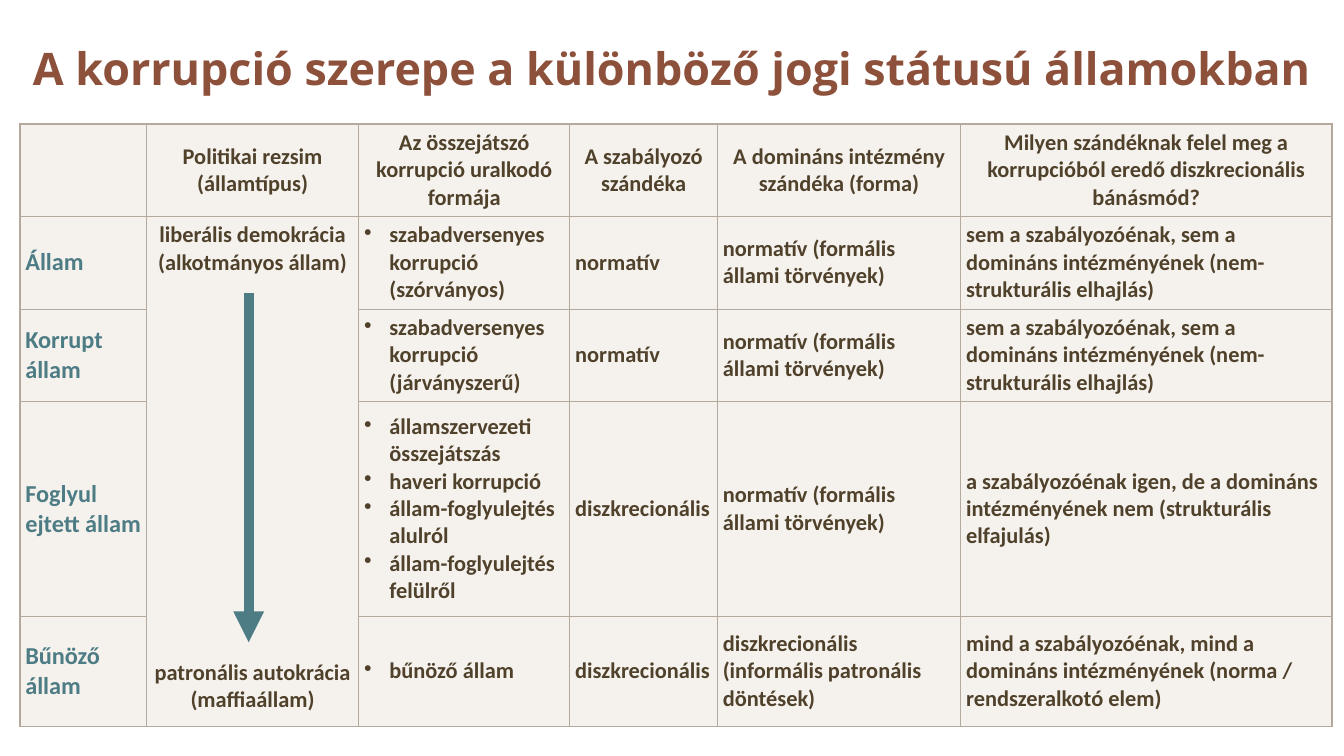
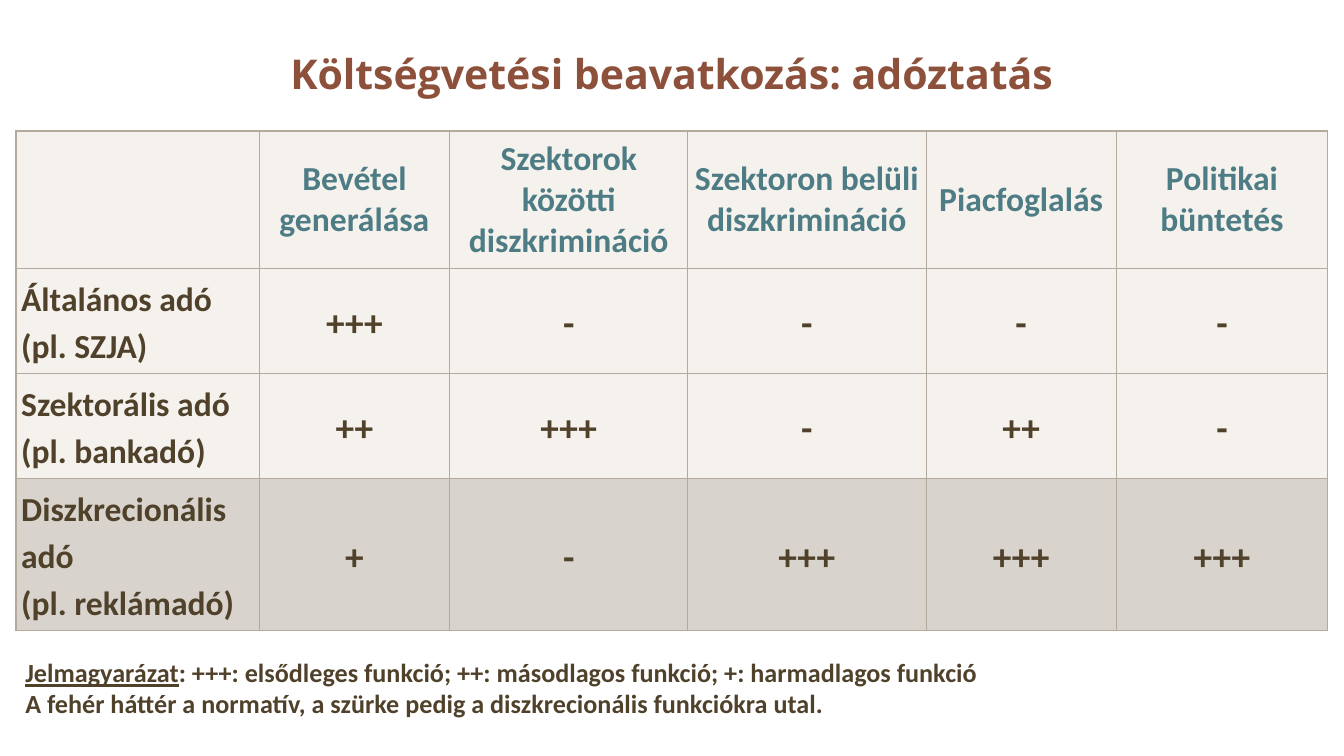
from lxml.etree import SubElement
from pptx import Presentation
from pptx.dml.color import RGBColor
from pptx.enum.shapes import MSO_CONNECTOR
from pptx.enum.text import MSO_ANCHOR, PP_ALIGN
from pptx.oxml import parse_xml
from pptx.oxml.ns import nsdecls, qn
from pptx.util import Cm, Pt

RUST = RGBColor(0x8D, 0x50, 0x3B)
TEAL = RGBColor(0x4D, 0x7C, 0x85)
BROWN = RGBColor(0x50, 0x41, 0x2B)
CREAM = RGBColor(0xEF, 0xEA, 0xE4)
GREY = RGBColor(0xB3, 0xAA, 0x9D)
GRID = RGBColor(0xB3, 0xA9, 0x9D)

TITLE_FONT = "Open Sans"
BODY_FONT = "Calibri"
CELL_MARGIN = Cm(0.1)
CONTENT_WIDTH = 24.79
OUTER_PT, INNER_PT = 1, 0.5

REGIME_HEADERS = [
    "",
    "Politikai rezsim (államtípus)",
    "Az összejátszó korrupció uralkodó formája",
    "A szabályozó szándéka",
    "A domináns intézmény szándéka (forma)",
    "Milyen szándéknak felel meg a korrupcióból eredő diszkrecionális bánásmód?",
]
REGIME_ENDS = [
    "liberális demokrácia\v(alkotmányos állam)",
    "patronális autokrácia",
    "(maffiaállam)",
]
FORMAL = "normatív (formális állami törvények)"
DEVIATION = ("sem a szabályozóénak, sem a domináns intézményének "
             "(nem-strukturális elhajlás)")
# State, forms of corruption, regulator, dominant institution, matching intention
STATES = [
    ("Állam", ["szabadversenyes korrupció (szórványos)"],
     "normatív", FORMAL, DEVIATION),
    ("Korrupt állam", ["szabadversenyes korrupció (járványszerű)"],
     "normatív", FORMAL, DEVIATION),
    ("Foglyul ejtett állam",
     ["államszervezeti összejátszás", "haveri korrupció",
      "állam-foglyulejtés alulról", "állam-foglyulejtés felülről"],
     "diszkrecionális", FORMAL,
     "a szabályozóénak igen, de a domináns intézményének nem "
     "(strukturális elfajulás)"),
    ("Bűnöző állam", ["bűnöző állam"], "diszkrecionális",
     "diszkrecionális (informális patronális döntések)",
     "mind a szabályozóénak, mind a domináns intézményének "
     "(norma / rendszeralkotó elem)"),
]

TAX_HEADERS = [
    "", "Bevétel generálása", "Szektorok közötti diszkrimináció",
    "Szektoron belüli diszkrimináció", "Piacfoglalás", "Politikai büntetés",
]
# Tax, scores by function, background
TAXES = [
    (["Általános adó (pl. SZJA)"], ["+++", "-", "-", "-", "-"], CREAM),
    (["Szektorális adó (pl. bankadó)"], ["++", "+++", "-", "++", "-"], CREAM),
    (["Diszkrecionális adó", "(pl. reklámadó)"],
     ["+", "-", "+++", "+++", "+++"], GREY),
]


def style_runs(paragraph, size, color, font=BODY_FONT):
    for run in paragraph.runs:
        run.font.name = font
        run.font.size = Pt(size)
        run.font.bold = True
        run.font.color.rgb = color


def add_titled_slide(prs, text, size, height):
    slide = prs.slides.add_slide(prs.slide_layouts[5])
    title = slide.shapes.title
    title.left, title.top = Cm(0.3), Cm(0)
    title.width, title.height = Cm(CONTENT_WIDTH), Cm(height)
    frame = title.text_frame
    frame.text = text
    frame.vertical_anchor = MSO_ANCHOR.MIDDLE
    frame.paragraphs[0].alignment = PP_ALIGN.CENTER
    style_runs(frame.paragraphs[0], size, RUST, TITLE_FONT)
    return slide


def add_grid(slide, left, top, columns, rows):
    frame = slide.shapes.add_table(len(rows), len(columns), Cm(left), Cm(top),
                                   Cm(sum(columns)), Cm(sum(rows)))
    table = frame.table
    table.first_row = table.horz_banding = False
    for column, width in zip(table.columns, columns):
        column.width = Cm(width)
    for row, height in zip(table.rows, rows):
        row.height = Cm(height)
    for r in range(len(rows)):
        for c in range(len(columns)):
            cell = table.cell(r, c)
            cell.margin_left = cell.margin_right = CELL_MARGIN
            cell.margin_top = cell.margin_bottom = CELL_MARGIN
            cell.vertical_anchor = MSO_ANCHOR.MIDDLE
            fill_cell(cell, CREAM, 60)
            border_cell(cell, {"lnL": c == 0, "lnR": c == len(columns) - 1,
                               "lnT": r == 0, "lnB": r == len(rows) - 1})
    return table


def fill_cell(cell, color, opacity):
    """Fill the cell with a colour at the given opacity in percent."""
    cell.fill.solid()
    cell.fill.fore_color.rgb = color
    rgb = cell.fill._xPr.find(qn("a:solidFill")).find(qn("a:srgbClr"))
    SubElement(rgb, qn("a:alpha"), val=str(opacity * 1000))


def border_cell(cell, edges):
    """Draw each edge, thicker where it lies on the outside of the table."""
    properties = cell._tc.get_or_add_tcPr()
    for position, (tag, is_outer) in enumerate(edges.items()):
        width = Pt(OUTER_PT if is_outer else INNER_PT)
        properties.insert(position, parse_xml(
            f'<a:{tag} {nsdecls("a")} w="{width}"><a:solidFill>'
            f'<a:srgbClr val="{GRID}"/></a:solidFill></a:{tag}>'))


def add_bullet(paragraph):
    properties = paragraph._p.get_or_add_pPr()
    indent = Cm(0.48)
    properties.set("marL", str(indent))
    properties.set("indent", str(-indent))
    SubElement(properties, qn("a:buChar"), char="•")


def write_cell(cell, lines, size, color=BROWN, centered=False,
               bulleted=False, spacing=None):
    frame = cell.text_frame
    for index, line in enumerate(lines):
        paragraph = frame.add_paragraph() if index else frame.paragraphs[0]
        paragraph.text = line
        paragraph.alignment = PP_ALIGN.CENTER if centered else PP_ALIGN.LEFT
        if spacing:
            paragraph.line_spacing = spacing
        if bulleted:
            add_bullet(paragraph)
        style_runs(paragraph, size, color)


def write_headers(table, headers, size, color):
    for column, header in enumerate(headers):
        if header:
            write_cell(table.cell(0, column), [header], size, color, centered=True)


def add_arrow(slide, x, top, bottom):
    arrow = slide.shapes.add_connector(MSO_CONNECTOR.STRAIGHT,
                                       Cm(x), Cm(top), Cm(x), Cm(bottom))
    arrow.line.color.rgb = TEAL
    arrow.line.width = Pt(5.5)
    SubElement(arrow.line._get_or_add_ln(), qn("a:tailEnd"), type="triangle")
    SubElement(arrow._element.spPr, qn("a:effectLst"))


def add_legend(slide):
    box = slide.shapes.add_textbox(Cm(0.23), Cm(11.91), Cm(CONTENT_WIDTH), Cm(2.18))
    frame = box.text_frame
    frame.word_wrap = True
    frame.vertical_anchor = MSO_ANCHOR.MIDDLE
    scores = frame.paragraphs[0]
    label = scores.add_run()
    label.text = "Jelmagyarázat"
    label.font.underline = True
    scores.add_run().text = (": +++: elsődleges funkció; ++: másodlagos funkció; "
                             "+: harmadlagos funkció")
    background = frame.add_paragraph()
    background.text = ("A fehér háttér a normatív, a szürke pedig a "
                       "diszkrecionális funkciókra utal.")
    for paragraph in frame.paragraphs:
        style_runs(paragraph, 14, BROWN)


def build_states_slide(prs):
    slide = add_titled_slide(
        prs, "A korrupció szerepe a különböző jogi státusú államokban", 24, 2.54)
    table = add_grid(slide, 0.38, 2.34, [2.39, 4.01, 3.99, 2.79, 4.6, 7.01],
                     [1.75, 1.75, 1.75, 4.06, 2.08])
    write_headers(table, REGIME_HEADERS, 12, BROWN)

    regime = table.cell(1, 1)
    regime.merge(table.cell(len(STATES), 1))
    regime.vertical_anchor = MSO_ANCHOR.TOP
    write_cell(regime, REGIME_ENDS, 12, centered=True)
    regime.text_frame.paragraphs[1].space_before = Pt(205)

    for row, (state, forms, *intentions) in enumerate(STATES, start=1):
        write_cell(table.cell(row, 0), [state], 13, TEAL)
        write_cell(table.cell(row, 2), forms, 12, bulleted=True)
        for column, intention in enumerate(intentions, start=3):
            write_cell(table.cell(row, column), [intention], 12)
    add_arrow(slide, 4.7, 5.54, 12.14)


def build_taxes_slide(prs):
    slide = add_titled_slide(prs, "Költségvetési beavatkozás: adóztatás", 22, 2.77)
    table = add_grid(slide, 0.3, 2.48, [4.6, 3.6, 4.5, 4.5, 3.6, 3.99],
                     [2.59, 1.98, 1.98, 2.88])
    write_headers(table, TAX_HEADERS, 18, TEAL)
    for row, (tax, scores, background) in enumerate(TAXES, start=1):
        write_cell(table.cell(row, 0), tax, 18, spacing=1.15)
        for column, score in enumerate(scores, start=1):
            write_cell(table.cell(row, column), [score], 20, centered=True,
                       spacing=1.15)
        if background == GREY:
            for column in range(len(TAX_HEADERS)):
                fill_cell(table.cell(row, column), GREY, 50)
    add_legend(slide)


def main():
    prs = Presentation()
    prs.slide_width, prs.slide_height = Cm(25.4), Cm(14.29)
    build_states_slide(prs)
    build_taxes_slide(prs)
    prs.save("out.pptx")


if __name__ == "__main__":
    main()
